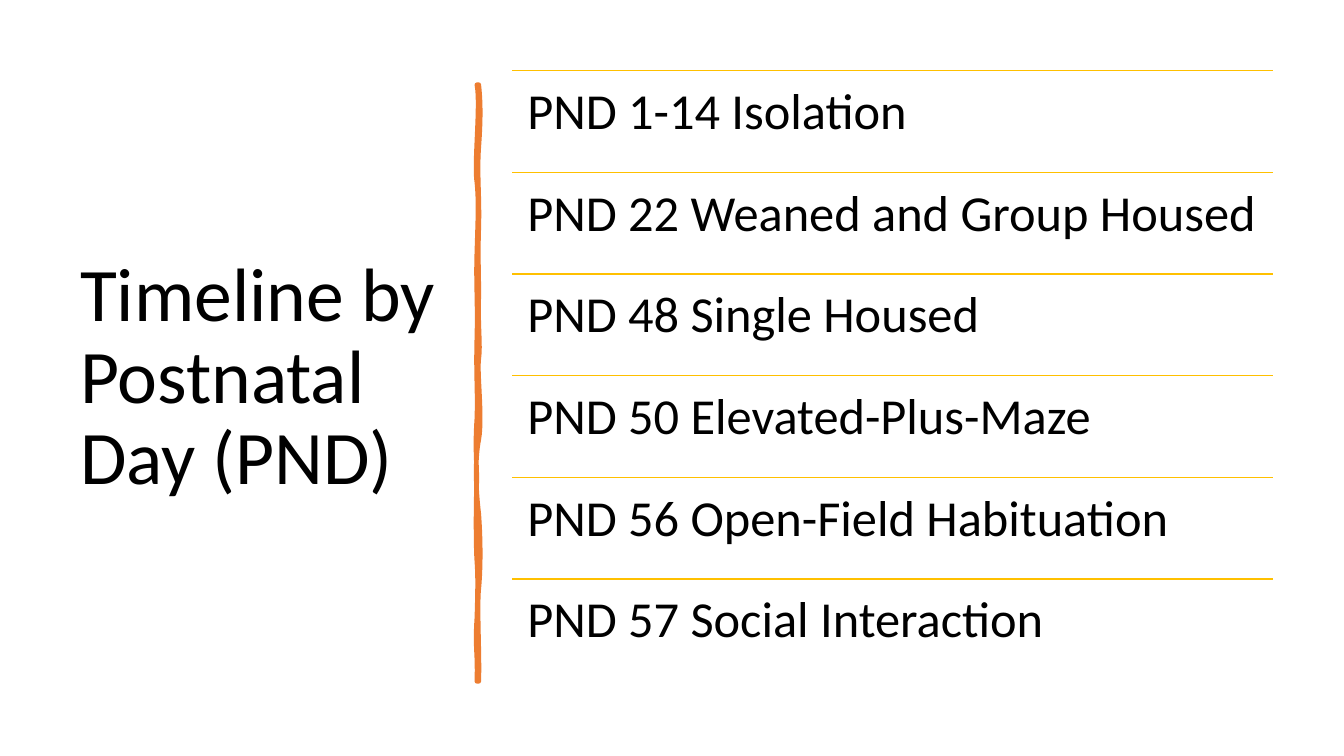
from lxml import etree
from pptx import Presentation, util as u
from pptx.dml.color import RGBColor
from pptx.enum import shapes, text
from pptx.oxml.ns import qn

STAGES = [
    "PND 1-14 Isolation",
    "PND 22 Weaned and Group Housed",
    "PND 48 Single Housed",
    "PND 50 Elevated-Plus-Maze",
    "PND 56 Open-Field Habituation",
    "PND 57 Social Interaction",
]

BAR_START = (342, 60.5)
BAR_CURVES = [
    ((343.4, 73.4), (343.4, 85.7), (342, 105.1)),
    ((340.6, 124.6), (342.7, 140.4), (342, 162.7)),
    ((341.3, 185), (342, 188.6), (342, 211.7)),
    ((341.3, 234), (343.4, 246.2), (342, 256.3)),
    ((340.6, 266.4), (344.9, 298.1), (342, 313.9)),
    ((339.1, 329), (339.8, 348.5), (342, 367.2)),
    ((343.4, 385.9), (343.4, 406.1), (342, 420.5)),
    ((340.6, 434.2), (342.7, 468), (342, 486.7)),
    ((341.3, 486.7), (340.6, 486.7), (340.6, 486.7)),
    ((341.3, 465.1), (339.1, 463.7), (340.6, 441.4)),
    ((341.3, 419.8), (341.3, 410.4), (340.6, 401)),
    ((339.8, 391.7), (339.8, 356.4), (340.6, 343.4)),
    ((340.6, 330.5), (339.1, 320.4), (340.6, 298.8)),
    ((341.3, 277.9), (339.8, 268.6), (340.6, 241.2)),
    ((341.3, 214.6), (339.8, 202.3), (340.6, 180)),
    ((341.3, 157), (342, 144), (340.6, 130.3)),
    ((338.4, 117.4), (343.4, 74.9), (340.6, 60.5)),
]


def color(hex_code):
    return RGBColor.from_string(hex_code)


def write(frame, wording, *, font, size, ink, anchor, inset=(7.2, 3.6), after=0):
    frame.word_wrap = True
    frame.auto_size = text.MSO_AUTO_SIZE.NONE
    frame.vertical_anchor = anchor
    frame.margin_left = frame.margin_right = u.Pt(inset[0])
    frame.margin_top = frame.margin_bottom = u.Pt(inset[1])
    paragraph = frame.paragraphs[0]
    paragraph.alignment = text.PP_ALIGN.LEFT
    paragraph.line_spacing = 0.9
    paragraph.space_after = u.Pt(after)
    run = paragraph.add_run()
    run.text = wording
    run.font.name = font
    run.font.size = u.Pt(size)
    run.font.color.rgb = color(ink)


def bend(outline, curves):
    segments = outline._element.findall(".//" + qn("a:lnTo"))
    for segment, curve in zip(segments, curves):
        bezier = etree.Element(qn("a:cubicBezTo"))
        for x, y in curve:
            etree.SubElement(bezier, qn("a:pt"), x=str(u.Pt(x) - outline.left),
                             y=str(u.Pt(y) - outline.top))
        segment.getparent().replace(segment, bezier)


class TimelineSlide:
    font = "Calibri"
    ink = "000000"
    accent = "ED7D31"
    divider = "FFC000"

    def __init__(self, deck):
        self.slide = deck.slides.add_slide(deck.slide_layouts[5])

    def heading(self, wording, left, top, width, height):
        title = self.slide.shapes.title
        title.left, title.top = u.Pt(left), u.Pt(top)
        title.width, title.height = u.Pt(width), u.Pt(height)
        write(title.text_frame, wording, font=self.font, size=54, ink=self.ink,
              anchor=text.MSO_ANCHOR.MIDDLE)

    def brush_bar(self, start, curves):
        knots = [(u.Pt(x), u.Pt(y)) for *_, (x, y) in curves]
        builder = self.slide.shapes.build_freeform(
            u.Pt(start[0]), u.Pt(start[1]), scale=1.0)
        builder.add_line_segments(knots, close=True)
        bar = builder.convert_to_shape()
        bend(bar, curves)
        bar.shadow.inherit = False
        bar.fill.solid()
        bar.fill.fore_color.rgb = color(self.accent)
        bar.line.color.rgb = color(self.accent)
        bar.line.width = u.Pt(3.25)
        etree.SubElement(bar._element.spPr.find(qn("a:ln")), qn("a:round"))

    def rule(self, left, top, width):
        rule = self.slide.shapes.add_connector(
            shapes.MSO_CONNECTOR.STRAIGHT,
            u.Pt(left), u.Pt(top), u.Pt(left + width), u.Pt(top))
        rule.line.color.rgb = color(self.divider)
        rule.line.width = u.Pt(1)
        etree.SubElement(rule._element.spPr, qn("a:effectLst"))

    def stage(self, wording, left, top, width, height):
        self.rule(left, top, width)
        box = self.slide.shapes.add_textbox(
            u.Pt(left), u.Pt(top), u.Pt(width), u.Pt(height))
        write(box.text_frame, wording, font=self.font, size=36, ink=self.ink,
              anchor=text.MSO_ANCHOR.TOP, inset=(10.8, 10.8), after=12.6)


def main():
    deck = Presentation()
    deck.slide_width, deck.slide_height = u.Pt(960), u.Pt(540)
    timeline = TimelineSlide(deck)
    timeline.heading("Timeline by Postnatal Day (PND)", 50, 50.4, 269, 440)
    timeline.brush_bar(BAR_START, BAR_CURVES)
    stages_top, row_height = 50.5, 72.63
    for row, stage in enumerate(STAGES):
        timeline.stage(stage, 365.8, stages_top + row * row_height, 543.6, row_height)
    deck.save("out.pptx")


if __name__ == "__main__":
    main()
